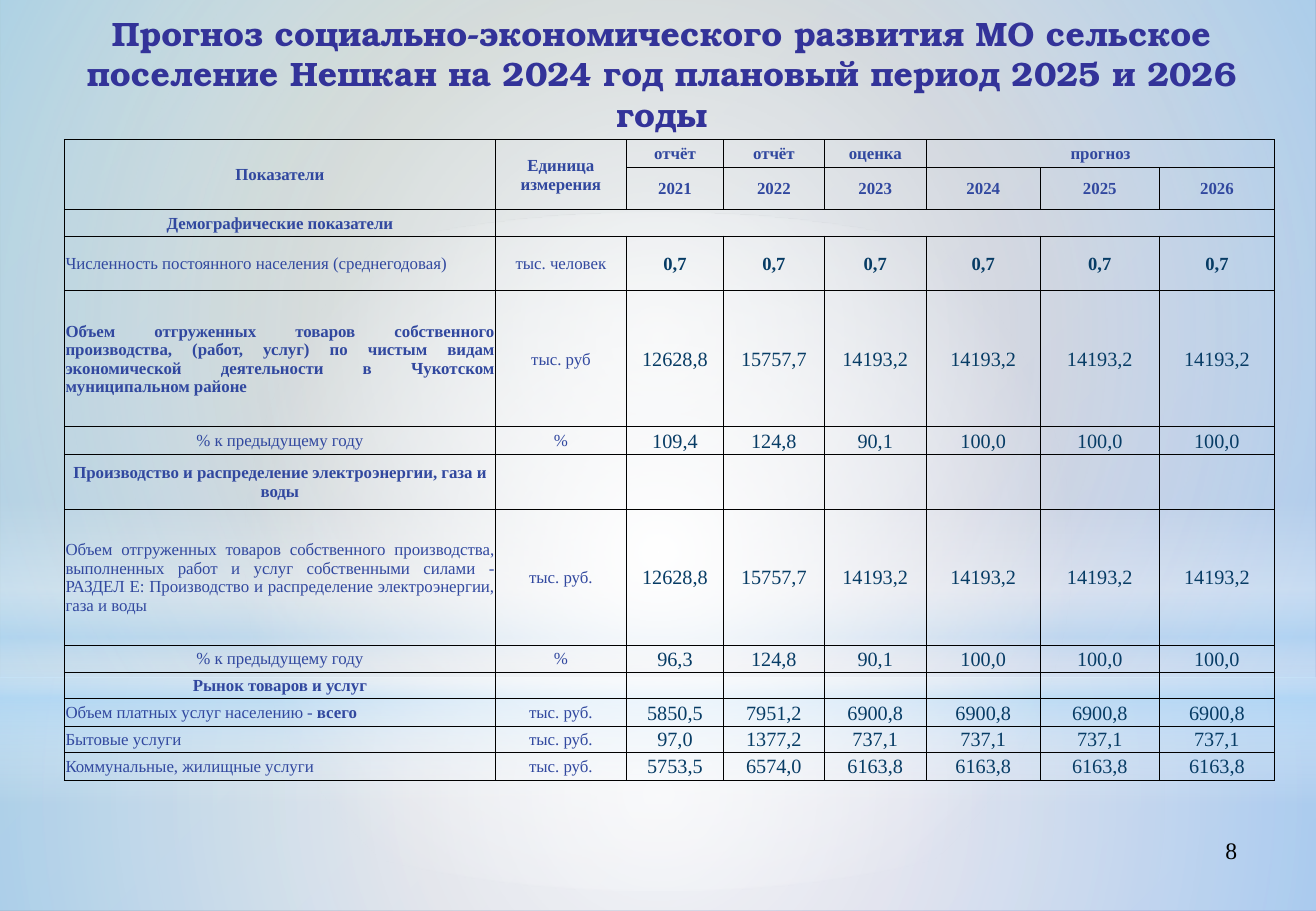
"""Build the slide with the settlement's socio-economic forecast table."""
import dataclasses

import lxml.etree
import pptx
import pptx.dml.color
import pptx.enum.shapes
import pptx.enum.text
import pptx.oxml
import pptx.oxml.ns
import pptx.util

Inches = pptx.util.Inches
Align = pptx.enum.text.PP_ALIGN
Anchor = pptx.enum.text.MSO_ANCHOR
Shape = pptx.enum.shapes.MSO_SHAPE
qn = pptx.oxml.ns.qn

SERIF = "Times New Roman"
LABEL_COLOR = "31489F"
VALUE_COLOR = "073C65"
COLUMN_WIDTHS = (3.55, 1.08, 0.8, 0.83, 0.84, 0.94, 0.98, 0.95)
CIRCLE = '<a:path path="circle"><a:fillToRect l="50000" t="50000" r="50000" b="50000"/></a:path>'
DOWN = '<a:lin ang="5400000" scaled="0"/>'


@dataclasses.dataclass(frozen=True)
class Glow:
    """A translucent gradient shape: stops are position, colour, opacity."""
    kind: Shape
    top: float
    height: float
    direction: str
    stops: tuple[tuple[int, str, int], ...]


@dataclasses.dataclass(frozen=True)
class Row:
    """A table row with its texts and the look of its label and values."""
    height: float
    texts: tuple[str, ...]
    label_align: Align = Align.CENTER
    label_bold: bool = False
    unit_bold: bool = False
    value_size: int = 12
    value_bold: bool = False
    value_color: str = VALUE_COLOR
    bold_ending: str = ""


GLOWS = (
    Glow(Shape.RECTANGLE, 5.58, 1.92, CIRCLE,
         ((0, "FFFFFF", 91), (37, "FFFFFF", 76), (100, "B4DCFA", 79))),
    Glow(Shape.RECTANGLE, 0, 5.58, CIRCLE,
         ((0, "FFFFFF", 89), (48, "FFFFFF", 62), (100, "B4DCFA", 79))),
    Glow(Shape.RECTANGLE, 4.12, 2.5, DOWN,
         ((0, "FFFFFF", 0), (29, "FFFFFF", 30), (45, "B4DCFA", 40),
          (55, "FFFFFF", 26), (65, "B4DCFA", 60), (100, "FFFFFF", 0))),
    Glow(Shape.OVAL, 1.75, 5.58, CIRCLE, ((0, "FFFFFF", 100), (56, "FFFFFF", 0))),
)

HEADER = dict(label_bold=True, unit_bold=True, value_size=10, value_bold=True,
              value_color=LABEL_COLOR)
PERCENT = "% к предыдущему году"
SHIPPED = ("12628,8", "15757,7") + ("14193,2",) * 4
ROWS = (
    Row(0.23, ("Показатели", "Единица измерения", "отчёт", "отчёт", "оценка", "прогноз"), **HEADER),
    Row(0.31, ("", "", "2021", "2022", "2023", "2024", "2025", "2026"), **HEADER),
    Row(0.22, ("Демографические показатели",), label_bold=True),
    Row(0.45, ("Численность постоянного населения (среднегодовая)", "тыс. человек") + ("0,7",) * 6,
        Align.LEFT, value_size=11, value_bold=True),
    Row(1.12, ("Объем отгруженных товаров собственного производства, (работ, услуг) по чистым видам "
               "экономической деятельности в Чукотском муниципальном районе", "тыс. руб") + SHIPPED,
        Align.JUSTIFY, label_bold=True),
    Row(0.23, (PERCENT, "%", "109,4", "124,8", "90,1") + ("100,0",) * 3),
    Row(0.45, ("Производство и распределение электроэнергии, газа и воды",), label_bold=True),
    Row(1.12, ("Объем отгруженных товаров собственного производства, выполненных работ и услуг "
               "собственными силами - РАЗДЕЛ E: Производство и распределение электроэнергии, "
               "газа и воды", "тыс. руб.") + SHIPPED, Align.JUSTIFY),
    Row(0.22, (PERCENT, "%", "96,3", "124,8", "90,1") + ("100,0",) * 3),
    Row(0.22, ("Рынок товаров и услуг",), label_bold=True),
    Row(0.23, ("Объем платных услуг населению - ", "тыс. руб.", "5850,5", "7951,2") + ("6900,8",) * 4,
        Align.LEFT, bold_ending="всего"),
    Row(0.19, ("Бытовые услуги", "тыс. руб.", "97,0", "1377,2") + ("737,1",) * 4, Align.LEFT),
    Row(0.23, ("Коммунальные, жилищные услуги", "тыс. руб.", "5753,5", "6574,0") + ("6163,8",) * 4,
        Align.LEFT),
)


def rgb(value: str) -> pptx.dml.color.RGBColor:
    """Turn a hex string into a colour."""
    return pptx.dml.color.RGBColor.from_string(value)


def style(span, size: float, color: str, bold: bool, font: str = SERIF) -> None:
    """Format one run of text."""
    span.font.name, span.font.size, span.font.bold = font, pptx.util.Pt(size), bold
    span.font.color.rgb = rgb(color)


def add_glow(page, width: int, glow: Glow) -> None:
    """Draw one full-width translucent gradient."""
    shape = page.shapes.add_shape(glow.kind, 0, Inches(glow.top), width, Inches(glow.height))
    shape.shadow.inherit = False
    shape.line.fill.background()
    shape.fill.background()
    stops = "".join(
        f'<a:gs pos="{place * 1000}"><a:srgbClr val="{color}">'
        f'<a:alpha val="{opacity * 1000}"/></a:srgbClr></a:gs>'
        for place, color, opacity in glow.stops)
    gradient = pptx.oxml.parse_xml(
        '<a:gradFill xmlns:a="http://schemas.openxmlformats.org/drawingml/2006/main" '
        f'rotWithShape="1"><a:gsLst>{stops}</a:gsLst>{glow.direction}</a:gradFill>')
    properties = shape._element.spPr
    properties.replace(properties.find(qn("a:noFill")), gradient)


def add_text(page, place: tuple[float, ...], text: str, align: Align, anchor: Anchor,
             size: float, color: str, bold: bool, font: str) -> None:
    """Add a wrapped text box with one paragraph."""
    box = page.shapes.add_textbox(*map(Inches, place))
    frame = box.text_frame
    frame.word_wrap = True
    frame.vertical_anchor = anchor
    frame.text = text
    para = frame.paragraphs[0]
    para.alignment = align
    style(para.runs[0], size, color, bold, font)


def frame_cell(cell) -> None:
    """Give a cell thin black borders, narrow margins and no fill."""
    properties = cell._tc.get_or_add_tcPr()
    for side in ("a:lnL", "a:lnR", "a:lnT", "a:lnB"):
        border = lxml.etree.SubElement(properties, qn(side), w="6350")
        solid = lxml.etree.SubElement(border, qn("a:solidFill"))
        lxml.etree.SubElement(solid, qn("a:srgbClr"), val="000000")
    cell.fill.background()
    cell.margin_left = cell.margin_right = cell.margin_top = Inches(0.01)
    cell.margin_bottom = 0
    cell.vertical_anchor = Anchor.MIDDLE


def fill_cell(cell, row: Row, column: int) -> None:
    """Write and format the text of one cell."""
    para = cell.text_frame.paragraphs[0]
    text = row.texts[column] if column < len(row.texts) else ""
    if not text:
        lxml.etree.SubElement(para._p, qn("a:endParaRPr"), sz="1000")
        return
    para.text = text
    para.alignment = row.label_align if column == 0 else Align.CENTER
    if column < 2:
        style(para.runs[0], 10, LABEL_COLOR, row.unit_bold if column else row.label_bold)
    else:
        style(para.runs[0], row.value_size, row.value_color, row.value_bold)
    if column == 0 and row.bold_ending:
        span = para.add_run()
        span.text = row.bold_ending
        style(span, 10, LABEL_COLOR, True)


def add_forecast(page) -> None:
    """Add the table of indicators."""
    height = sum(row.height for row in ROWS)
    table = page.shapes.add_table(
        len(ROWS), len(COLUMN_WIDTHS), Inches(0.53), Inches(1.15),
        Inches(sum(COLUMN_WIDTHS)), Inches(height)).table
    table.first_row = table.horz_banding = False
    for column, width in zip(table.columns, COLUMN_WIDTHS):
        column.width = Inches(width)
    for index, row in enumerate(ROWS):
        table.rows[index].height = Inches(row.height)
        for column in range(len(COLUMN_WIDTHS)):
            cell = table.cell(index, column)
            frame_cell(cell)
            fill_cell(cell, row, column)
    for first, last in (((0, 0), (1, 0)), ((0, 1), (1, 1)), ((0, 5), (0, 7)), ((2, 1), (2, 7))):
        table.cell(*first).merge(table.cell(*last))


def main() -> None:
    """Build and save the deck."""
    deck = pptx.Presentation()
    deck.slide_width, deck.slide_height = Inches(10.84), Inches(7.5)
    page = deck.slides.add_slide(deck.slide_layouts[6])
    backdrop = page.background.fill
    backdrop.gradient()
    backdrop.gradient_angle = 315
    for stop, color in zip(backdrop.gradient_stops, ("96AB94", "8488C4")):
        stop.color.rgb = rgb(color)
    for glow in GLOWS:
        add_glow(page, deck.slide_width, glow)
    add_text(page, (7.76, 6.83, 2.53, 0.52), "8", Align.RIGHT, Anchor.TOP,
             14, "000000", False, SERIF)
    add_text(page, (0.41, 0.22, 10.08, 0.77),
             "Прогноз социально-экономического развития МО сельское поселение Нешкан "
             "на 2024 год плановый период 2025 и 2026 годы",
             Align.CENTER, Anchor.MIDDLE, 20, "333399", True, "TeX Gyre Bonum")
    add_forecast(page)
    deck.save("out.pptx")


if __name__ == "__main__":
    main()
